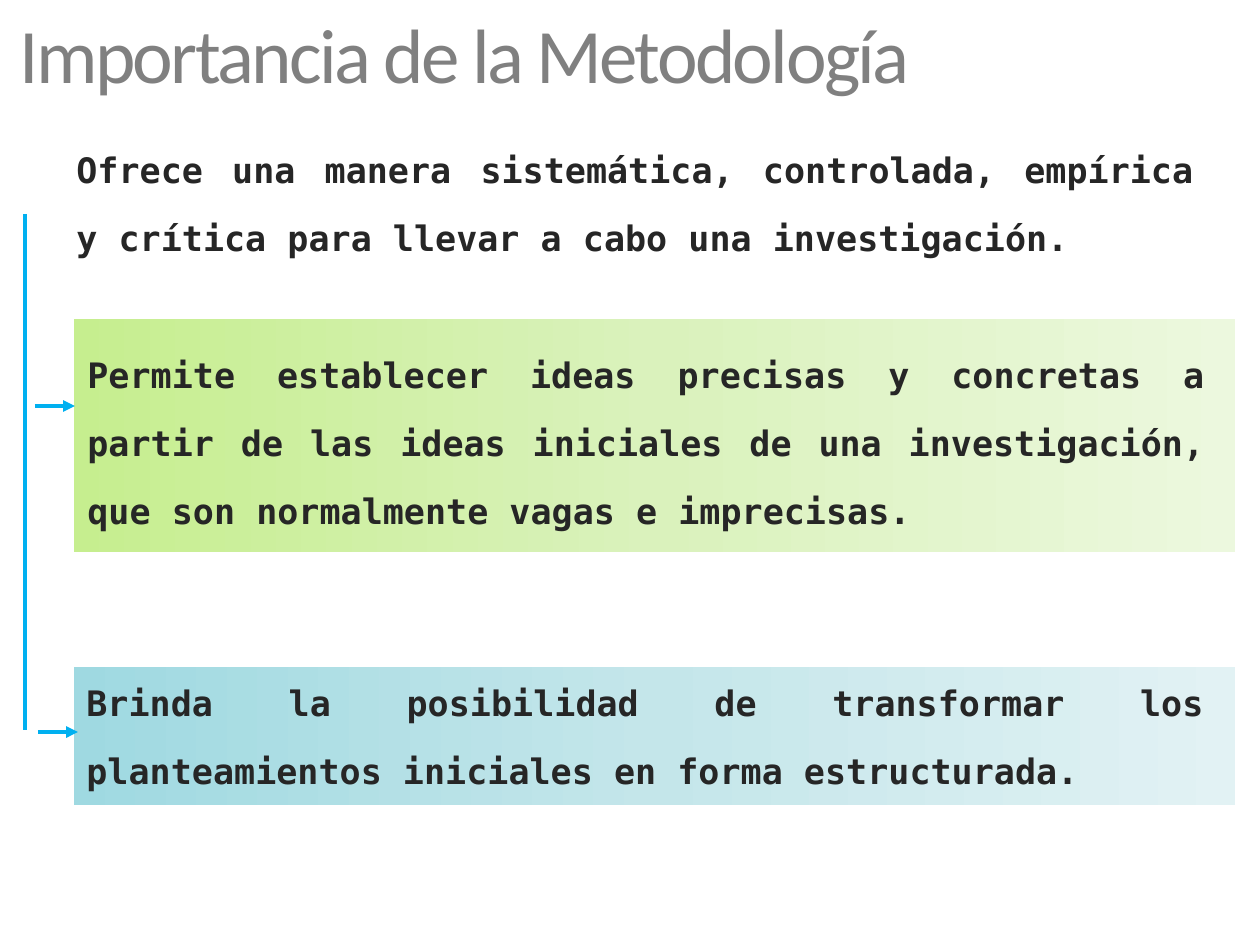
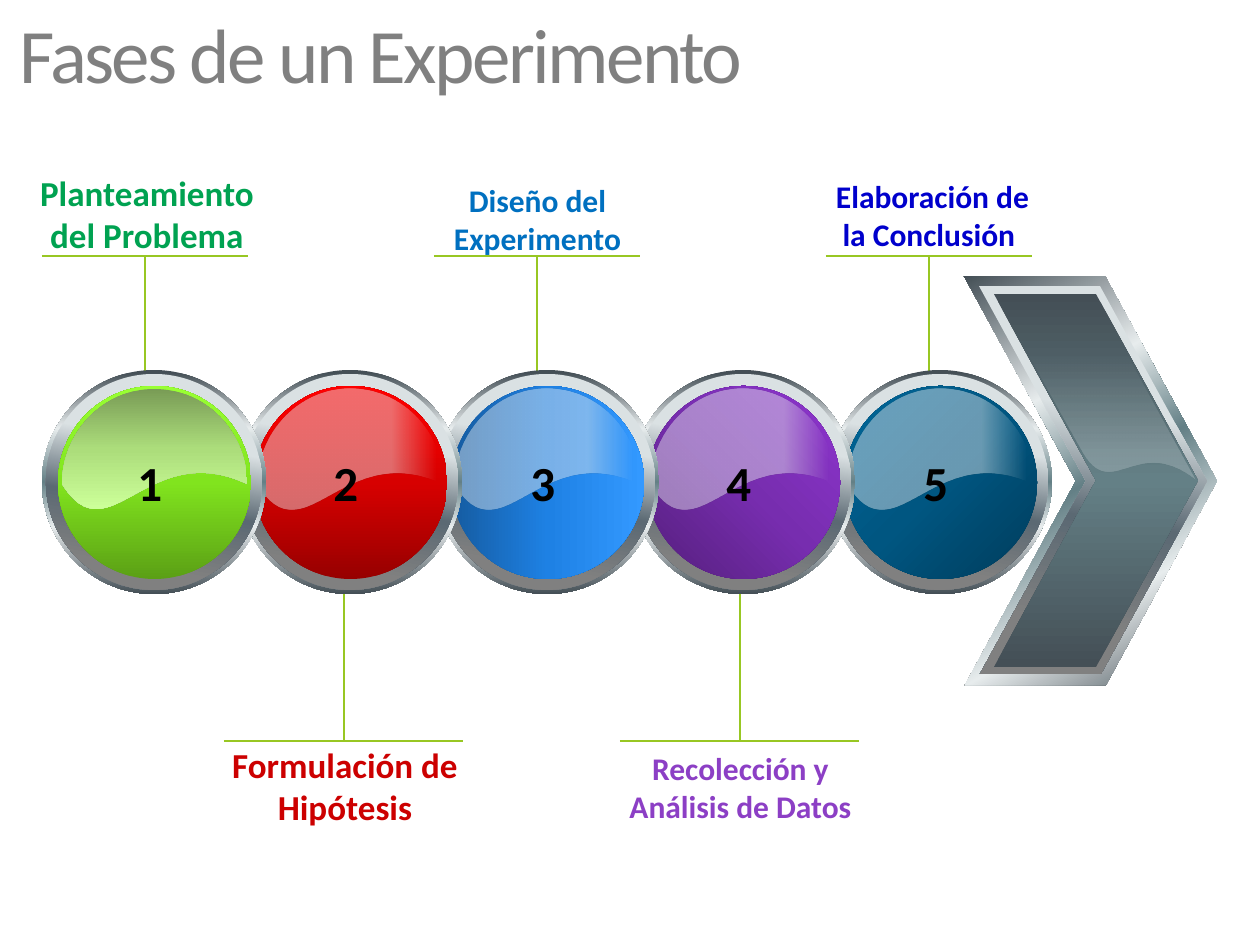
"""Build two slides on research methodology and the phases of an experiment."""
from dataclasses import dataclass

from lxml.etree import SubElement
from pptx import Presentation
from pptx.dml.color import RGBColor
from pptx.enum.shapes import MSO_CONNECTOR, MSO_SHAPE
from pptx.enum.text import MSO_ANCHOR, MSO_AUTO_SIZE, PP_ALIGN
from pptx.oxml.ns import qn
from pptx.util import Pt

EMU_PER_PX = 914400 / 126
CURVE_STEPS = 40


@dataclass(frozen=True)
class Theme:
    """Hold the fonts, type sizes and colours of both slides."""
    heading_font: str = "Calibri"
    body_font: str = "DejaVu Sans Mono"
    title_size: int = 44
    number_size: int = 28
    body_size: int = 20
    large_label_size: int = 20
    label_size: int = 18
    body_leading: int = 39
    title_color: str = "808080"
    body_color: str = "262626"
    number_color: str = "000000"
    arrow_color: str = "00B0F0"
    leader_color: str = "98C723"
    green_panel: tuple = ((0, "C6EE8F"), (50, "DAF2BC"), (100, "ECF8DE"))
    blue_panel: tuple = ((0, "9FD9E1"), (50, "C4E6EA"), (100, "E2F2F4"))
    metal: tuple = ((1, "444F56"), (26, "E7ECED"), (50, "648086"), (70, "E7ECED"), (100, "444F56"))
    bevel: tuple = ((33, "DAE1E3"), (59, "5B6973"), (85, "808080"))
    steel: tuple = ((0, "444F56"), (50, "648086"), (100, "444F56"))
    arrow_gloss: tuple = ((33, "E7ECED", 0), (85, "E7ECED", 23))
    disc_gloss: tuple = ((72, "E7ECED", 45), (96, "E7ECED", 0))
    green_gloss: tuple = ((0, "799C56"), (50, "ACDD7B"), (100, "CCFF99"))


THEME = Theme()

DISCS = [
    (("5BA015", "81E41E", "99FF33"), 270, THEME.green_gloss, 90),
    (("970000", "D70000", "FF0000"), 270, THEME.disc_gloss, 0),
    (("155BA0", "1E81E4", "3399FF"), 0, THEME.disc_gloss, 0),
    (("541F7B", "772DAF", "8E35CF"), 315, THEME.disc_gloss, 0),
    (("003C5B", "005681", "006699"), 225, THEME.disc_gloss, 0),
]

PHASE_LABELS = [
    ("Planteamiento del Problema", (21, 165, 252, 97), THEME.large_label_size, "00A251"),
    ("Formulación de Hipótesis", (203, 737, 284, 97), THEME.large_label_size, "CC0000"),
    ("Diseño del Experimento", (422, 175, 231, 89), THEME.label_size, "0070C0"),
    ("Recolección y Análisis de Datos", (605, 743, 271, 89), THEME.label_size, "8C3FC5"),
    ("Elaboración de la Conclusión ", (817, 171, 231, 89), THEME.label_size, "0000CC"),
]


def px(length):
    """Turn pixels into EMU."""
    return round(length * EMU_PER_PX)


def add_text(slide, text, box, *, size, color, font=THEME.heading_font, bold=True,
             align=PP_ALIGN.LEFT, leading=None, spacing=None, grow=True):
    """Add a wrapped text box with one formatted run."""
    shape = slide.shapes.add_textbox(*map(px, box))
    frame = shape.text_frame
    frame.word_wrap = True
    frame.vertical_anchor = MSO_ANCHOR.TOP
    frame.auto_size = MSO_AUTO_SIZE.SHAPE_TO_FIT_TEXT if grow else MSO_AUTO_SIZE.NONE
    paragraph = frame.paragraphs[0]
    paragraph.alignment = align
    if leading:
        paragraph.line_spacing = Pt(leading)
    run = paragraph.add_run()
    run.text = text
    run.font.name = font
    run.font.size = Pt(size)
    run.font.bold = bold
    run.font.color.rgb = RGBColor.from_string(color)
    if spacing:
        run.font._element.set("spc", str(round(spacing * 100)))


def add_title(slide, text, width):
    """Add the slide title."""
    add_text(slide, text, (7, 0, width, 94), size=THEME.title_size, color=THEME.title_color,
             bold=False, spacing=-1.5, grow=False)


def add_body(slide, text, left, top, height):
    """Add a justified body paragraph."""
    add_text(slide, text, (left, top, 1142, height), size=THEME.body_size,
             color=THEME.body_color, font=THEME.body_font, align=PP_ALIGN.JUSTIFY,
             leading=THEME.body_leading)


def paint(shape, stops, angle):
    """Give a shape a linear gradient, without outline or shadow."""
    shape.shadow.inherit = False
    shape.line.fill.background()
    shape.fill.gradient()
    gradient = shape._element.spPr.find(qn("a:gradFill"))
    for child in list(gradient):
        gradient.remove(child)
    stop_list = SubElement(gradient, qn("a:gsLst"))
    for position, color, *opacity in stops:
        stop = SubElement(stop_list, qn("a:gs"), pos=str(position * 1000))
        color_element = SubElement(stop, qn("a:srgbClr"), val=color)
        if opacity:
            SubElement(color_element, qn("a:alpha"), val=str(opacity[0] * 1000))
    SubElement(gradient, qn("a:lin"), ang=str(angle * 60000), scaled="0")


def add_preset(slide, kind, box, stops, angle):
    """Add a preset shape with a gradient."""
    shape = slide.shapes.add_shape(kind, *map(px, box))
    paint(shape, stops, angle)
    return shape


def curve_points(start, first, second, end):
    """Sample a cubic curve to measure how far it reaches."""
    points = []
    for step in range(1, CURVE_STEPS + 1):
        t = step / CURVE_STEPS
        weights = ((1 - t) ** 3, 3 * t * (1 - t) ** 2, 3 * t * t * (1 - t), t ** 3)
        points.append(tuple(sum(weight * point[axis] for weight, point
                                in zip(weights, (start, first, second, end)))
                            for axis in (0, 1)))
    return points


def add_polygon(slide, points, stops, angle):
    """Add a closed outline of straight sides."""
    corners = [(px(x), px(y)) for x, y in points]
    builder = slide.shapes.build_freeform(*corners[0])
    builder.add_line_segments(corners[1:], close=True)
    shape = builder.convert_to_shape()
    paint(shape, stops, angle)
    return shape


def add_curved_outline(slide, start, segments, stops, angle):
    """Add a closed outline of one-point lines and three-point cubic curves."""
    points = [start] + [point for segment in segments for point in segment]
    shape = add_polygon(slide, points, stops, angle)
    outline = shape._element.spPr.find(".//" + qn("a:path"))
    sides = iter(outline.findall(qn("a:lnTo")))
    reach = [start]
    current = start
    for segment in segments:
        side = next(sides)
        if len(segment) == 3:
            curve = SubElement(outline, qn("a:cubicBezTo"))
            side.addprevious(curve)
            for control in (side, next(sides), next(sides)):
                curve.append(control[0])
                outline.remove(control)
            reach += curve_points(current, *segment)
        else:
            reach += segment
        current = segment[-1]
    fit_box(shape, outline, reach)


def fit_box(shape, outline, reach):
    """Fit the box of a curved outline to the extent of its curves."""
    columns, rows = zip(*reach)
    left, top = px(min(columns)), px(min(rows))
    width, height = px(max(columns)) - left, px(max(rows)) - top
    for point in outline.iter(qn("a:pt")):
        point.set("x", str(int(point.get("x")) + shape.left - left))
        point.set("y", str(int(point.get("y")) + shape.top - top))
    outline.set("w", str(width))
    outline.set("h", str(height))
    shape.left, shape.top, shape.width, shape.height = left, top, width, height


def add_line(slide, start, end, color, width, arrow=False):
    """Add a straight line, with an arrowhead at its end if asked."""
    connector = slide.shapes.add_connector(MSO_CONNECTOR.STRAIGHT, *map(px, start + end))
    connector.line.color.rgb = RGBColor.from_string(color)
    connector.line.width = Pt(width)
    properties = connector._element.spPr
    if arrow:
        SubElement(properties.find(qn("a:ln")), qn("a:tailEnd"), type="triangle")
    SubElement(properties, qn("a:effectLst"))


def add_leader(slide, left, width, rule_y, disc_y):
    """Add the rule beside a label and the stem from its middle to a disc."""
    middle = left + (width + 1) // 2
    add_line(slide, (left, rule_y), (left + width, rule_y), THEME.leader_color, 0.75)
    add_line(slide, (middle, rule_y), (middle, disc_y), THEME.leader_color, 0.75)


def add_medallion(slide, number, left, top):
    """Add a numbered glossy disc in a metal ring."""
    colors, angle, gloss, gloss_angle = DISCS[number - 1]
    add_preset(slide, MSO_SHAPE.OVAL, (left, top, 224, 224), THEME.metal, 90)
    ring = add_preset(slide, MSO_SHAPE.DONUT, (left + 4, top + 4, 216, 216), THEME.bevel, 100)
    ring.adjustments[0] = 0.07
    add_preset(slide, MSO_SHAPE.OVAL, (left + 16, top + 16, 193, 193),
               tuple(zip((0, 50, 100), colors)), angle)
    curves = [
        ((20, 62), (62, 19), (112, 19)),
        ((164, 19), (205, 62), (205, 114)),
        ((105, 67), (67, 189), (20, 114)),
    ]
    segments = [[(left + x, top + y) for x, y in curve] for curve in curves]
    add_curved_outline(slide, (left + 20, top + 114), segments, gloss, gloss_angle)
    add_text(slide, str(number), (left + 83, top + 76, 53, 72),
             size=THEME.number_size, color=THEME.number_color)


def add_big_arrow(slide):
    """Add the metal chevron that closes the sequence."""
    frame = [(964, 276), (1105, 276), (1217, 481), (1106, 685), (965, 685), (1076, 481)]
    inset = [(979, 286), (1100, 286), (1207, 481), (1101, 674), (980, 674), (1086, 481)]
    add_polygon(slide, frame, THEME.metal, 240)
    add_polygon(slide, inset, THEME.bevel, 100)
    add_preset(slide, MSO_SHAPE.CHEVRON, (994, 294, 204, 373), THEME.steel, 90)
    gloss = [
        [(1095, 296)],
        [(1196, 480)],
        [(1135, 432), (1111, 508), (1080, 447)],
        [(1062, 416), (998, 299), (998, 297)],
    ]
    add_curved_outline(slide, (998, 297), gloss, THEME.arrow_gloss, 90)


def build_importance(slide):
    """Fill the slide on why methodology matters."""
    add_title(slide, "Importancia de la Metodología", 1487)
    add_preset(slide, MSO_SHAPE.RECTANGLE, (74, 319, 1161, 233), THEME.green_panel, 0)
    add_body(slide, "Permite establecer ideas precisas y concretas a partir de las ideas iniciales "
             "de una investigación, que son normalmente vagas e imprecisas.", 75, 321, 210)
    add_preset(slide, MSO_SHAPE.RECTANGLE, (74, 667, 1161, 138), THEME.blue_panel, 0)
    add_body(slide, "Brinda la posibilidad de transformar los planteamientos iniciales "
             "en forma estructurada.", 74, 649, 210)
    add_line(slide, (35, 406), (75, 406), THEME.arrow_color, 2.25, arrow=True)
    add_line(slide, (38, 732), (78, 732), THEME.arrow_color, 2.25, arrow=True)
    add_line(slide, (25, 214), (25, 730), THEME.arrow_color, 2.25)
    add_body(slide, "Ofrece una manera sistemática, controlada, empírica y crítica para llevar "
             "a cabo una investigación. ", 64, 116, 150)


def build_phases(slide):
    """Fill the slide on the five phases of an experiment."""
    add_title(slide, "Fases de un Experimento", 1174)
    for index in range(3):
        add_leader(slide, 42 + 392 * index, 206, 256, 462)
    for index in range(2):
        add_leader(slide, 224 + 396 * index, 239, 741, 500)
    add_big_arrow(slide)
    for index in reversed(range(len(DISCS))):
        add_medallion(slide, index + 1, 42 + 786 * index // 4, 370)
    for text, box, size, color in PHASE_LABELS:
        add_text(slide, text, box, size=size, color=color, align=PP_ALIGN.CENTER)


def main():
    """Build and save the presentation."""
    presentation = Presentation()
    presentation.slide_width = px(1260)
    presentation.slide_height = px(945)
    for build in (build_importance, build_phases):
        build(presentation.slides.add_slide(presentation.slide_layouts[6]))
    presentation.save("out.pptx")


if __name__ == "__main__":
    main()
